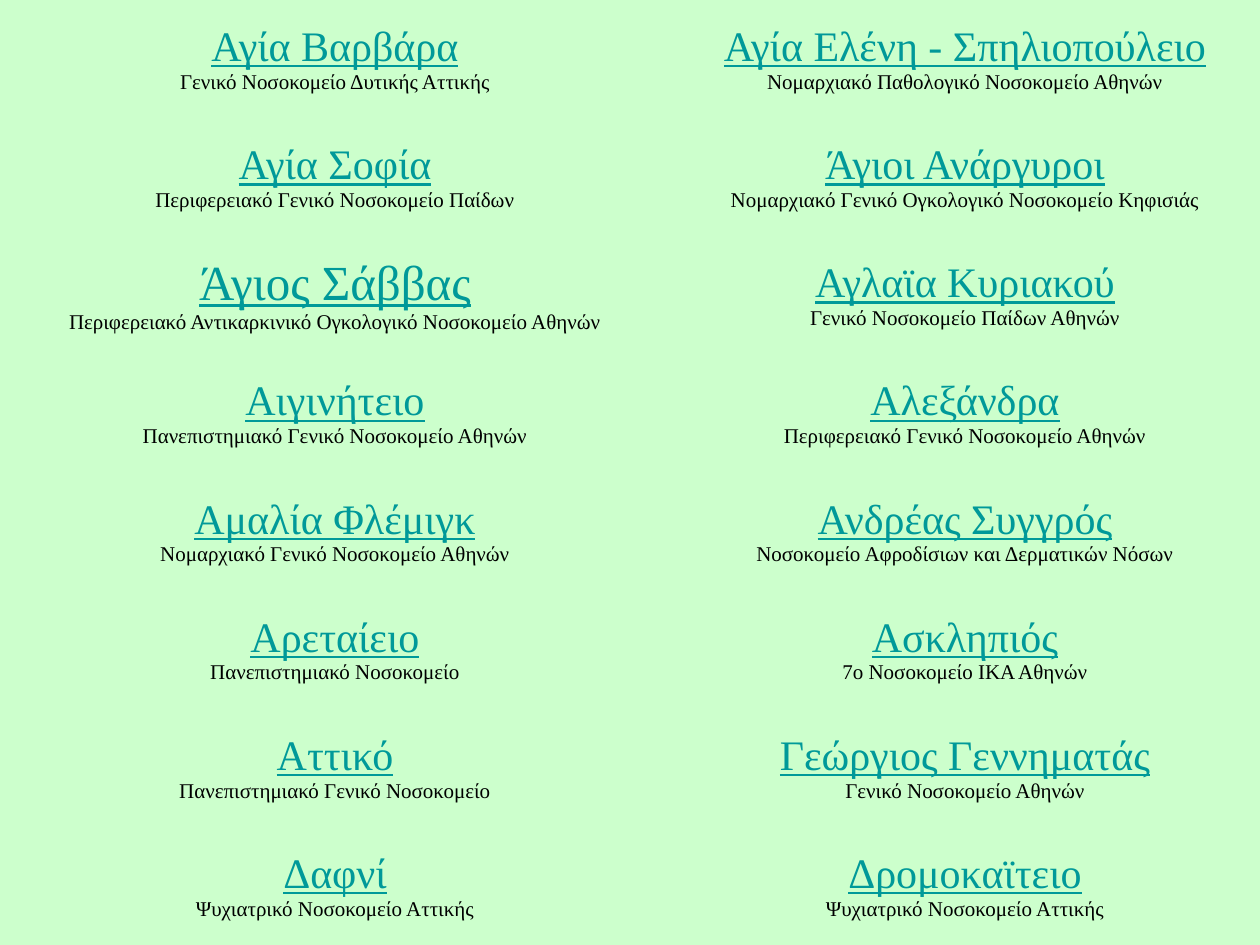
"""Build a slide that lists hospitals of Attica in a two-column table."""
from dataclasses import dataclass

from lxml.etree import SubElement
from pptx import Presentation
from pptx.dml.color import RGBColor
from pptx.enum.text import MSO_ANCHOR, PP_ALIGN
from pptx.oxml.ns import qn
from pptx.util import Pt

HOSPITALS = [
    [("Αγία Βαρβάρα", "Γενικό Νοσοκομείο Δυτικής Αττικής"),
     ("Αγία Ελένη - Σπηλιοπούλειο", "Νομαρχιακό Παθολογικό Νοσοκομείο Αθηνών")],
    [("Αγία Σοφία", "Περιφερειακό Γενικό Νοσοκομείο Παίδων"),
     ("Άγιοι Ανάργυροι", "Νομαρχιακό Γενικό Ογκολογικό Νοσοκομείο Κηφισιάς")],
    [("Άγιος Σάββας", "Περιφερειακό Αντικαρκινικό Ογκολογικό Νοσοκομείο Αθηνών"),
     ("Αγλαϊα Κυριακού", "Γενικό Νοσοκομείο Παίδων Αθηνών")],
    [("Αιγινήτειο", "Πανεπιστημιακό Γενικό Νοσοκομείο Αθηνών"),
     ("Αλεξάνδρα", "Περιφερειακό Γενικό Νοσοκομείο Αθηνών")],
    [("Αμαλία Φλέμιγκ", "Νομαρχιακό Γενικό Νοσοκομείο Αθηνών"),
     ("Ανδρέας Συγγρός", "Νοσοκομείο Αφροδίσιων και Δερματικών Νόσων")],
    [("Αρεταίειο", "Πανεπιστημιακό Νοσοκομείο"),
     ("Ασκληπιός", "7ο Νοσοκομείο ΙΚΑ Αθηνών")],
    [("Αττικό", "Πανεπιστημιακό Γενικό Νοσοκομείο"),
     ("Γεώργιος Γεννηματάς", "Γενικό Νοσοκομείο Αθηνών")],
    [("Δαφνί", "Ψυχιατρικό Νοσοκομείο Αττικής"),
     ("Δρομοκαϊτειο", "Ψυχιατρικό Νοσοκομείο Αττικής")],
]
LARGE_NAMES = {"Άγιος Σάββας"}
WIDTH, HEIGHT = 1260, 945
COLUMN_WIDTHS = (670, 590)
EMU_PER_PX = 914400 / 126


@dataclass(frozen=True)
class Theme:
    font: str = "Times New Roman"
    background: RGBColor = RGBColor(0xCC, 0xFF, 0xCC)
    name: RGBColor = RGBColor(0x00, 0x99, 0x99)
    kind: RGBColor = RGBColor(0x00, 0x00, 0x00)
    name_size: int = 24
    large_name_size: int = 28
    kind_size: int = 12


THEME = Theme()


def px(length):
    return round(length * EMU_PER_PX)


def clear_cell(cell):
    properties = cell._tc.get_or_add_tcPr()
    for side in ("a:lnL", "a:lnR", "a:lnT", "a:lnB"):
        SubElement(SubElement(properties, qn(side)), qn("a:noFill"))
    cell.fill.background()


def format_run(run, size, color, underline):
    font = run.font
    font.name = THEME.font
    font.size = Pt(size)
    font.color.rgb = color
    font.underline = underline


def fill_cell(cell, name, kind):
    clear_cell(cell)
    cell.vertical_anchor = MSO_ANCHOR.MIDDLE
    cell.text_frame.text = f"{name}\v{kind}"
    paragraph = cell.text_frame.paragraphs[0]
    paragraph.alignment = PP_ALIGN.CENTER
    name_run, kind_run = paragraph.runs
    name_size = THEME.large_name_size if name in LARGE_NAMES else THEME.name_size
    format_run(name_run, name_size, THEME.name, True)
    format_run(kind_run, THEME.kind_size, THEME.kind, False)


def add_hospital_table(slide):
    frame = slide.shapes.add_table(
        len(HOSPITALS), len(COLUMN_WIDTHS), 0, 0, px(WIDTH), px(HEIGHT))
    table = frame.table
    table.first_row = table.horz_banding = False
    for column, width in zip(table.columns, COLUMN_WIDTHS):
        column.width = px(width)
    for row, hospitals in zip(table.rows, HOSPITALS):
        row.height = px(HEIGHT / len(HOSPITALS))
        for cell, (name, kind) in zip(row.cells, hospitals):
            fill_cell(cell, name, kind)


def main():
    presentation = Presentation()
    presentation.slide_width = px(WIDTH)
    presentation.slide_height = px(HEIGHT)
    slide = presentation.slides.add_slide(presentation.slide_layouts[6])
    slide.background.fill.solid()
    slide.background.fill.fore_color.rgb = THEME.background
    add_hospital_table(slide)
    presentation.save("out.pptx")


if __name__ == "__main__":
    main()
